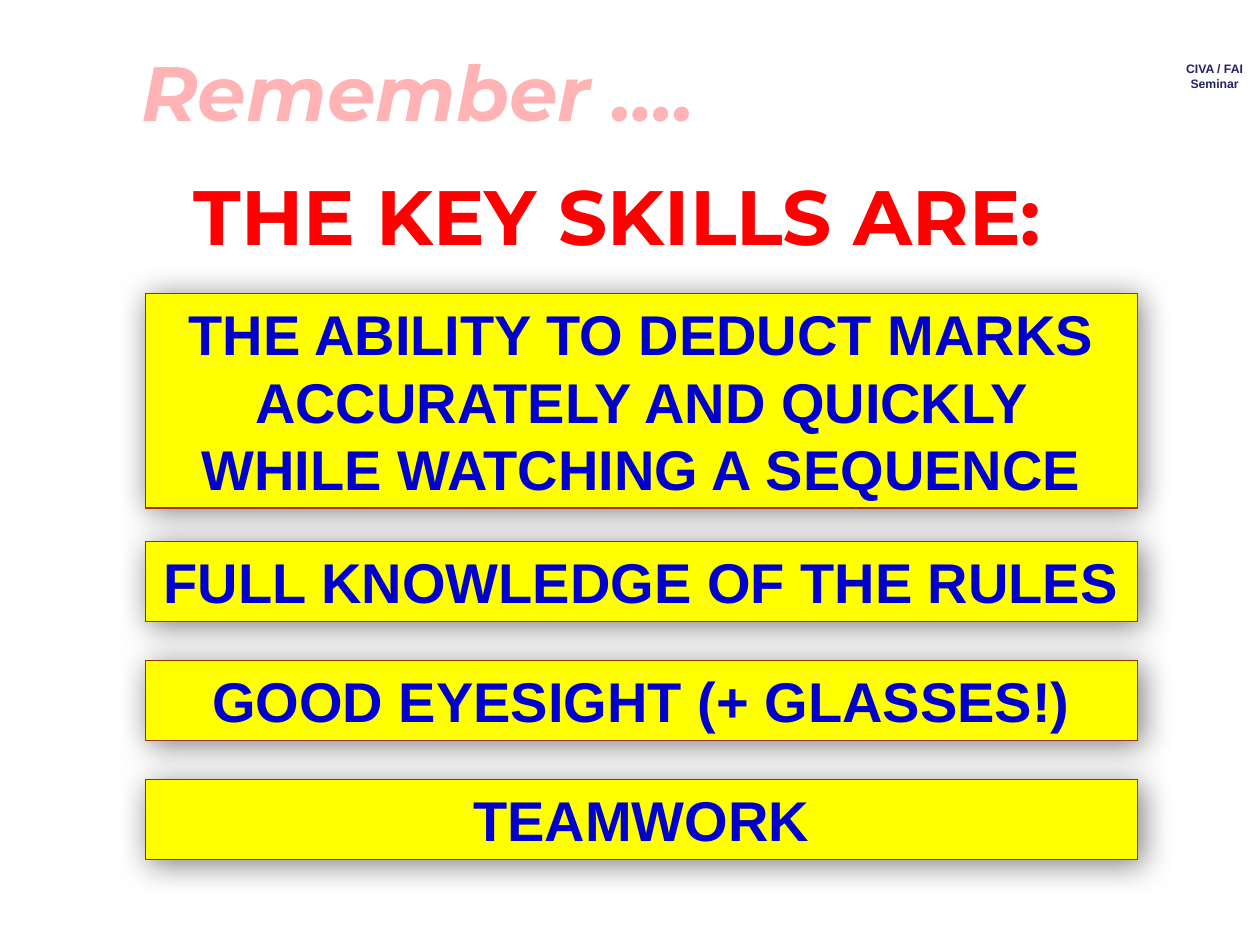
from lxml import etree
from pptx import Presentation
from pptx import util as u
from pptx.dml.color import RGBColor
from pptx.enum import shapes, text
from pptx.oxml import ns


def tint(code):
    return RGBColor.from_string(code)


def shade(code, blur, dist):
    root = etree.Element(ns.qn("a:effectLst"))
    cast = etree.SubElement(
        root, ns.qn("a:outerShdw"), blurRad=str(u.Pt(blur)),
        dist=str(u.Pt(dist)), dir="2700000", algn="ctr", rotWithShape="0")
    etree.SubElement(cast, ns.qn("a:srgbClr"), val=code)
    return root


def write(frame, lines, size, color, face="Arial", italic=False,
          align=text.PP_ALIGN.CENTER, anchor=text.MSO_ANCHOR.MIDDLE,
          wrap=True):
    frame.word_wrap = wrap
    frame.vertical_anchor = anchor
    for i, line in enumerate(lines):
        para = frame.paragraphs[0] if i == 0 else frame.add_paragraph()
        para.alignment = align
        run = para.add_run()
        run.text = line
        font = run.font
        font.name = face
        font.size = u.Pt(size)
        font.bold = True
        font.italic = italic
        font.color.rgb = tint(color)


class Deck:
    ink = "0000CC"
    fill = "FFFF00"
    edge = "993300"
    grey = "808080"
    head = "Montserrat"

    def __init__(self):
        self.show = Presentation()
        self.show.slide_width = u.Cm(25.4)
        self.show.slide_height = u.Cm(19.05)
        self.slide = self.show.slides.add_slide(self.show.slide_layouts[6])

    def label(self, box, lines, **style):
        item = self.slide.shapes.add_textbox(*map(u.Cm, box))
        write(item.text_frame, lines, **style)

    def title(self, box, line, color, **style):
        self.label(box, [line], size=44, color=color, face=self.head, **style)

    def tag(self, box, lines):
        self.label(box, lines, size=7, color="222267", wrap=False,
                   anchor=text.MSO_ANCHOR.TOP)

    def panel(self, box, line):
        item = self.slide.shapes.add_shape(
            shapes.MSO_SHAPE.RECTANGLE, *map(u.Cm, box))
        item.fill.solid()
        item.fill.fore_color.rgb = tint(self.fill)
        item.line.color.rgb = tint(self.edge)
        item.line.width = u.Pt(0.75)
        item.shadow.inherit = False
        props = item._element.spPr
        props.replace(props.find(ns.qn("a:effectLst")),
                      shade(self.grey, 18, 2.8))
        write(item.text_frame, [line], size=32, color=self.ink,
              anchor=text.MSO_ANCHOR.TOP)


def main():
    deck = Deck()
    deck.tag((23.62, 1.12, 1.73, 0.86), ["CIVA / FAI", "Seminar"])
    deck.title((2.6, 0.93, 13.79, 1.8), "Remember ….", "FFB3B5",
               italic=True, align=text.PP_ALIGN.LEFT)
    deck.title((1.02, 3.14, 22.86, 2.39), "THE KEY SKILLS ARE:", "FF0000")

    left, wide = 2.93, 20
    deck.panel((left, 5.92, wide, 4.32),
               "THE ABILITY TO DEDUCT MARKS ACCURATELY AND QUICKLY "
               "WHILE WATCHING A SEQUENCE")
    skills = ["FULL KNOWLEDGE OF THE RULES", "GOOD EYESIGHT (+ GLASSES!)",
              "TEAMWORK"]
    for i, skill in enumerate(skills):
        deck.panel((left, 10.92 + 2.4 * i, wide, 1.61), skill)
    deck.show.save("out.pptx")


if __name__ == "__main__":
    main()
